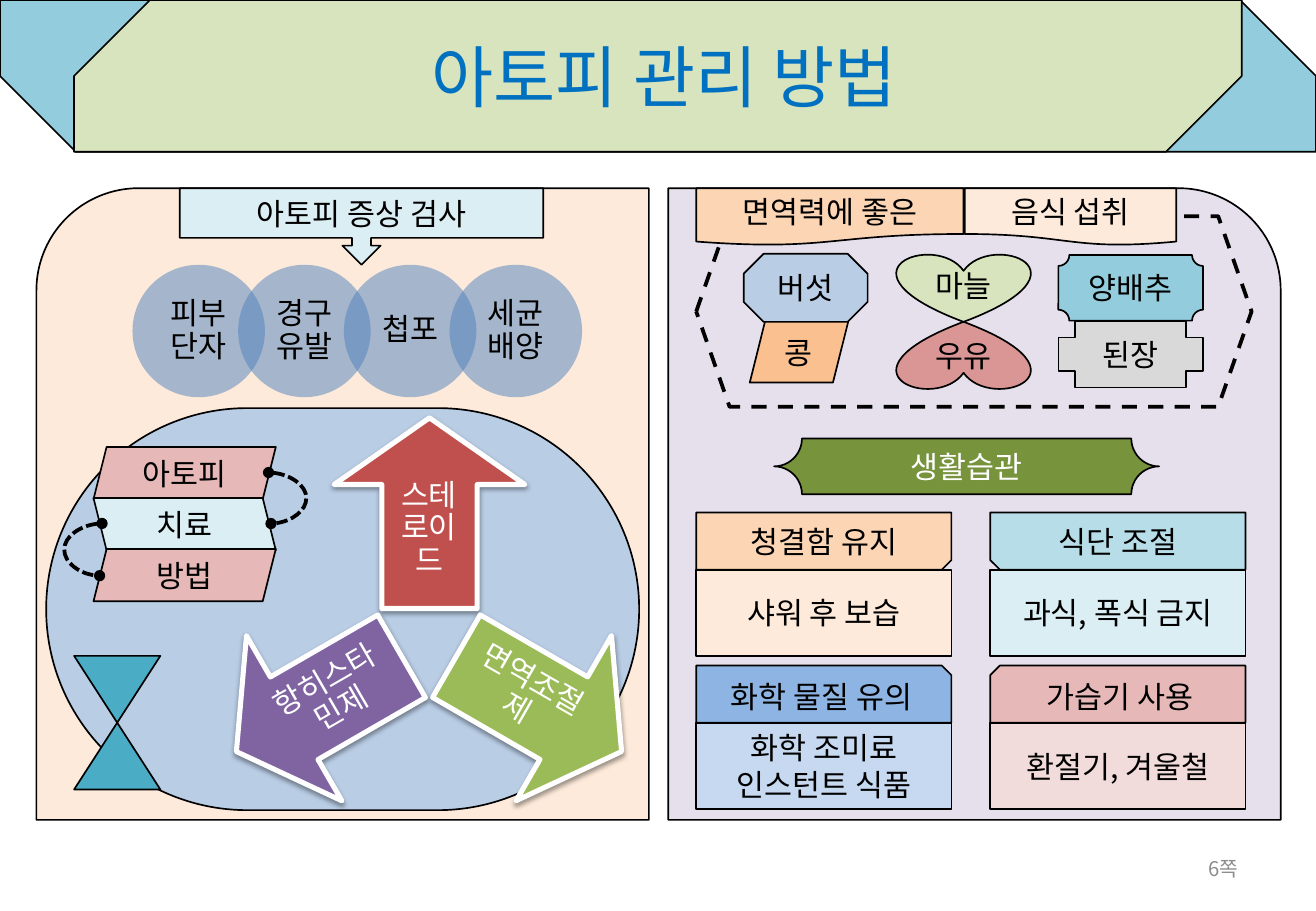
"""Builds the one-slide overview of atopy management."""
import pptx
import pptx.util
import pptx.dml.color
import pptx.enum.dml
import pptx.enum.shapes
import pptx.enum.text
import pptx.oxml
import pptx.oxml.ns

Inches = pptx.util.Inches
Kind = pptx.enum.shapes.MSO_SHAPE
Align = pptx.enum.text.PP_ALIGN
Dash = pptx.enum.dml.MSO_LINE

THEME = {
    "font": "Noto Sans CJK KR", "title_size": 40, "body_size": 18, "page_size": 12,
    "title": "0070C0", "page": "8C8C8C", "black": "000000", "white": "FFFFFF",
    "teal": "93CDDD", "lime": "D7E4BD", "cream": "FDEADA", "sky": "B9CDE5",
    "lilac": "E6E0EC", "red": "C0504D", "green": "9BBB59", "purple": "8064A2",
    "blue": "4F81BD", "ice": "DBEEF4", "pink": "E6B9B8", "aqua": "4BACC6",
    "peach": "FCD5B5", "rose": "D99694", "orange": "FAC090", "grey": "D9D9D9",
    "olive": "77933C", "pale_aqua": "B7DEE8", "mid_blue": "8EB4E3",
    "pale_blue": "C6D9F1", "blush": "F2DCDB",
}

TITLE, PAGE = "아토피 관리 방법", "6쪽"
TESTS_TITLE = "아토피 증상 검사"
TESTS = ["피부단자", "경구유발", "첩포", "세균배양"]
TREATMENT = [("아토피", "pink", ""), ("치료", "ice", "h"), ("방법", "pink", "")]
MEDICINES = [
    ("스테로이드", "red", (2.75, 3.44), 0, (3.14, 3.71, 0.78, 1.29), 0),
    ("면역조절제", "green", (3.65, 5.01), 120, (3.67, 5.33, 1.29, 0.78), 30),
    ("항히스타민제", "purple", (1.84, 5.01), 240, (2.1, 5.33, 1.29, 0.78), 330),
]
LOOPS = [((2.21, 3.89), (2.23, 4.31)), ((0.84, 4.31), (0.82, 4.74))]
FOODS = [
    ("면역력에 좋은", Kind.FLOWCHART_DOCUMENT, (5.73, 1.55, 2.2, 0.47), "peach", ""),
    ("음식 섭취", Kind.FLOWCHART_DOCUMENT, (7.94, 1.55, 1.74, 0.47), "cream", "h"),
    ("버섯", Kind.OCTAGON, (6.12, 2.09, 1.02, 0.56), "sky", ""),
    ("마늘", Kind.HEART, (7.38, 2.09, 1.1, 0.56), "lime", ""),
    ("양배추", Kind.PLAQUE, (8.71, 2.1, 1.19, 0.54), "teal", ""),
    ("우유", Kind.HEART, (7.38, 2.65, 1.1, 0.56), "rose", "v"),
    ("콩", Kind.PARALLELOGRAM, (6.17, 2.65, 0.81, 0.5), "orange", ""),
    ("된장", Kind.CROSS, (8.71, 2.64, 1.19, 0.55), "grey", ""),
]
HABITS_TITLE = "생활습관"
HABITS = [
    ("청결함 유지", "peach", "샤워 후 보습", "cream"),
    ("식단 조절", "pale_aqua", "과식, 폭식 금지", "ice"),
    ("화학 물질 유의", "mid_blue", "화학 조미료\n인스턴트 식품", "pale_blue"),
    ("가습기 사용", "pink", "환절기, 겨울철", "blush"),
]


def rgb(name):
    return pptx.dml.color.RGBColor.from_string(THEME[name])


def xml(tag, attributes="", inner=""):
    space = pptx.oxml.ns.nsdecls("a")
    return pptx.oxml.parse_xml(f"<a:{tag} {space} {attributes}>{inner}</a:{tag}>")


def write(shape, words, color="black", size="body_size", align=Align.CENTER,
          margins=(0.1, 0.05), spacing=None, wrap=True):
    frame = shape.text_frame
    frame.text = words
    frame.word_wrap = wrap
    frame.vertical_anchor = pptx.enum.text.MSO_ANCHOR.MIDDLE
    frame.margin_left = frame.margin_right = Inches(margins[0])
    frame.margin_top = frame.margin_bottom = Inches(margins[1])
    for para in frame.paragraphs:
        para.alignment = align
        if spacing:
            para.line_spacing = spacing
        for span in para.runs:
            span.font.size = pptx.util.Pt(THEME[size])
            span.font.color.rgb = rgb(color)
            span.font.name = THEME["font"]
            span.font._element.append(xml("ea", f'typeface="{THEME["font"]}"'))


def label(slide, box, words, rotation=0, **style):
    shape = slide.shapes.add_textbox(*map(Inches, box))
    shape.rotation = rotation
    write(shape, words, **style)


def draw(slide, kind, box, fill=None, words="", flip="", adjust=(),
         line="black", width=1, color="black"):
    shape = slide.shapes.add_shape(kind, *map(Inches, box))
    shape.shadow.inherit = False
    for index, value in enumerate(adjust):
        shape.adjustments[index] = value
    if fill:
        shape.fill.solid()
        shape.fill.fore_color.rgb = rgb(fill)
    else:
        shape.fill.background()
    if line:
        shape.line.color.rgb = rgb(line)
        shape.line.width = pptx.util.Pt(width)
    else:
        shape.line.fill.background()
    for axis in flip:
        shape._element.spPr.xfrm.set("flip" + axis.upper(), "1")
    if words and "v" in flip:
        label(slide, box, words, color=color, wrap=False)
    elif words:
        write(shape, words, color)
    return shape


def draw_header(slide):
    draw(slide, Kind.SNIP_2_DIAG_RECTANGLE, (0, 0, 10.83, 1.25), "teal", adjust=(0, 0.5))
    draw(slide, Kind.SNIP_2_DIAG_RECTANGLE, (0.61, 0, 9.61, 1.25), "lime",
         flip="h", adjust=(0, 0.5))
    label(slide, (0.59, 0, 9.75, 1.25), TITLE, color="title", size="title_size")
    label(slide, (7.76, 6.95, 2.53, 0.4), PAGE, color="page", size="page_size",
          align=Align.RIGHT)


def draw_medicines(slide):
    for words, fill, (left, top), turn, text_box, text_turn in MEDICINES:
        arrow = draw(slide, Kind.UP_ARROW, (left, top, 1.57, 1.57), fill,
                     adjust=(0.5, 0.35), line="white", width=3)
        arrow.rotation = turn
        effects = arrow._element.spPr.find(pptx.oxml.ns.qn("a:effectLst"))
        effects.append(xml(
            "outerShdw", 'blurRad="39370" dist="20320" dir="5400000" rotWithShape="0"',
            '<a:srgbClr val="000000"><a:alpha val="38000"/></a:srgbClr>'))
        label(slide, text_box, words, text_turn, color="white",
              margins=(0.14, 0.14), spacing=0.9)


def draw_tests(slide):
    for index, words in enumerate(TESTS):
        circle = draw(slide, Kind.OVAL, (1.09 + 0.87 * index, 2.18, 1.09, 1.09),
                      "blue", line=None)
        write(circle, words, margins=(0.06, 0.03), spacing=0.9)
        circle.fill._xPr.find(pptx.oxml.ns.qn("a:solidFill"))[0].append(
            xml("alpha", 'val="50000"'))
    draw(slide, Kind.DOWN_ARROW_CALLOUT, (1.48, 1.55, 2.99, 0.63), "ice", TESTS_TITLE)


def draw_loop(slide, start, end, bulge=0.31):
    loop = slide.shapes.add_connector(pptx.enum.shapes.MSO_CONNECTOR.CURVE,
                                      *map(Inches, start + end))
    loop.line.color.rgb = rgb("black")
    loop.line.width = pptx.util.Pt(2.25)
    loop.line.dash_style = Dash.SQUARE_DOT
    outline = loop.line._get_or_add_ln()
    for tag in ("headEnd", "tailEnd"):
        outline.append(xml(tag, 'type="oval"'))
    properties = loop._element.spPr
    properties.append(xml("effectLst"))
    share = round(bulge / abs(end[0] - start[0]) * 100000)
    guides = properties.find(pptx.oxml.ns.qn("a:prstGeom")).find(pptx.oxml.ns.qn("a:avLst"))
    guides.append(xml("gd", f'name="adj1" fmla="val {share}"'))


def draw_left_panel(slide):
    draw(slide, Kind.SNIP_ROUND_RECTANGLE, (0.3, 1.55, 5.04, 5.2), "cream",
         adjust=(0.167, 0))
    draw(slide, Kind.ROUNDED_RECTANGLE, (0.38, 3.36, 4.88, 3.31), "sky", adjust=(0.5,))
    draw_medicines(slide)
    draw_tests(slide)
    for index, (words, fill, flip) in enumerate(TREATMENT):
        draw(slide, Kind.PARALLELOGRAM, (0.77, 3.68 + 0.42 * index, 1.5, 0.43),
             fill, words, flip)
    for start, end in LOOPS:
        draw_loop(slide, start, end)
    draw(slide, Kind.FLOWCHART_COLLATE, (0.61, 5.4, 0.71, 1.1), "aqua")


def draw_right_panel(slide):
    draw(slide, Kind.SNIP_ROUND_RECTANGLE, (5.5, 1.55, 5.04, 5.2), "lilac",
         flip="h", adjust=(0.167, 0))
    frame = draw(slide, Kind.HEXAGON, (5.73, 1.78, 4.57, 1.57), adjust=(0.175,), width=2.25)
    frame.line.dash_style = Dash.DASH
    for words, kind, box, fill, flip in FOODS:
        draw(slide, kind, box, fill, words, flip)
    draw(slide, Kind.PLAQUE, (6.37, 3.61, 3.17, 0.46), "olive", HABITS_TITLE,
         adjust=(0.5,), color="white")
    for index, (heading, heading_fill, advice, advice_fill) in enumerate(HABITS):
        row, column = divmod(index, 2)
        left, top = 5.73 + 2.42 * column, 4.22 + 1.26 * row
        flip = ("h" if column else "") + ("" if row else "v")
        draw(slide, Kind.SNIP_1_RECTANGLE, (left, top, 2.1, 0.47), heading_fill, heading, flip)
        draw(slide, Kind.RECTANGLE, (left, top + 0.47, 2.1, 0.71), advice_fill, advice)


def main():
    deck = pptx.Presentation()
    deck.slide_width, deck.slide_height = Inches(10.83), Inches(7.5)
    slide = deck.slides.add_slide(deck.slide_layouts[6])
    draw_header(slide)
    draw_left_panel(slide)
    draw_right_panel(slide)
    deck.save("out.pptx")


if __name__ == "__main__":
    main()
